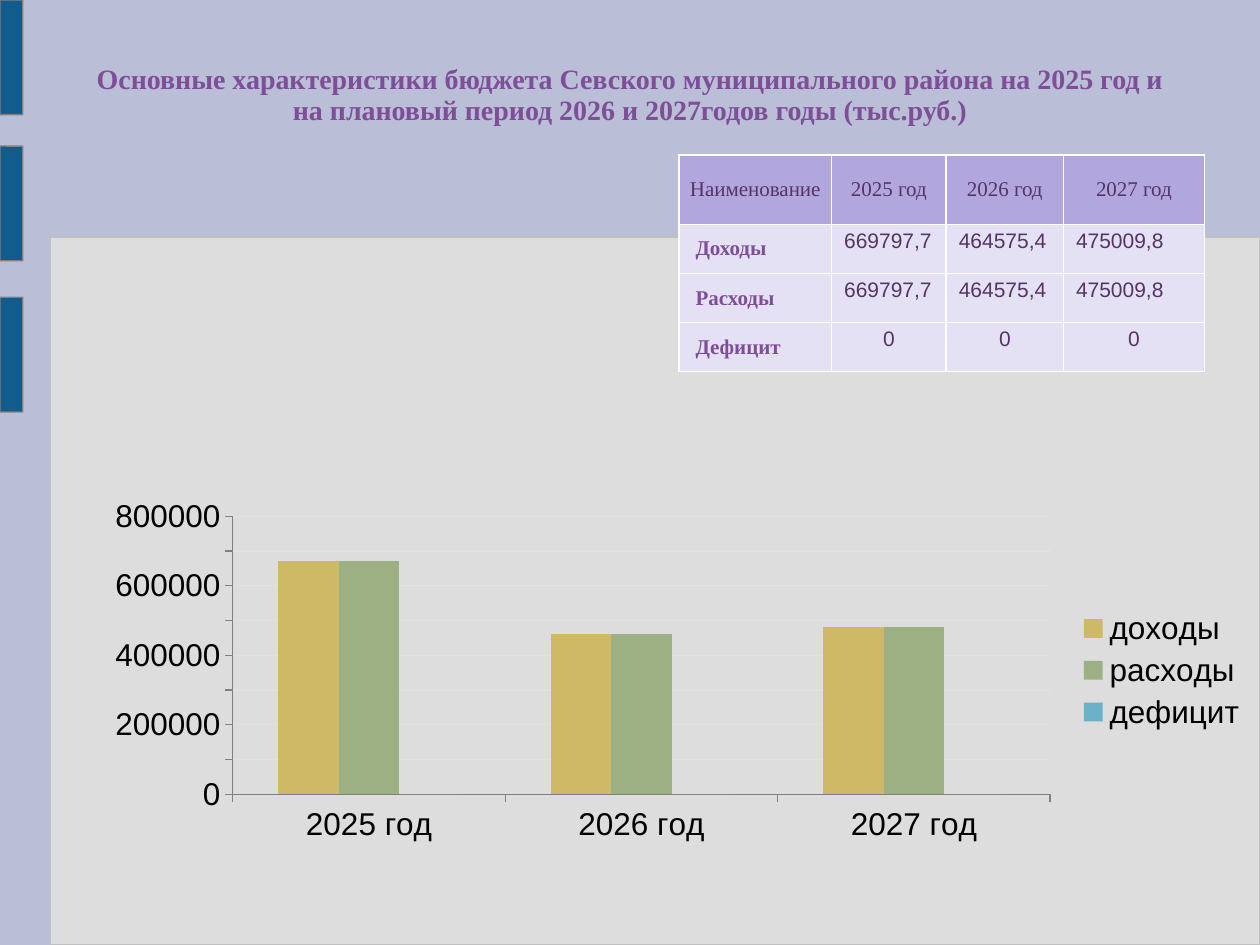
from lxml import etree
from pptx import Presentation
from pptx import util as u
from pptx.chart.data import CategoryChartData
from pptx.dml.color import RGBColor
from pptx.enum import chart as ch, shapes, text
from pptx.oxml.ns import qn

TITLE = ("Основные характеристики бюджета Севского муниципального района на 2025 год и "
         "на плановый период 2026 и 2027годов годы (тыс.руб.)")
HEADER = ["Наименование", "2025 год", "2026 год", "2027 год"]
BUDGET = [
    ("Доходы", ["669797,7", "464575,4", "475009,8"]),
    ("Расходы", ["669797,7", "464575,4", "475009,8"]),
    ("Дефицит", ["0", "0", "0"]),
]
BARS = [
    ("доходы", [670000, 460000, 480000], "CEB966"),
    ("расходы", [670000, 460000, 480000], "9CB084"),
    ("дефицит", [0, 0, 0], "6BB1C9"),
]
COLUMN_WIDTHS = [1.21, 0.91, 0.93, 1.12]
ROW_HEIGHTS = [0.55, 0.39, 0.39, 0.39]
TAB_TOPS = [0, 1.16, 2.36]

THEME = {
    "background": "BABED6", "panel": "DDDDDD", "panel_line": "C0C0C0",
    "tab": "125C8D", "tab_line": "808080",
    "accent": "7E4E99", "ink": "543466", "header": "B2A6DF", "body": "E5E1F4",
    "border": "FFFFFF", "grid": "E1E0E2", "axis": "808080", "chart_text": "000000",
    "serif": "Times New Roman", "sans": "Arial",
    "title_size": 16, "table_size": 12, "chart_size": 18, "leading": 0.93,
}


def color(key):
    return RGBColor.from_string(THEME.get(key, key))


def style_font(font, size, face, ink, bold=False):
    font.size, font.name, font.bold = u.Pt(THEME[size]), THEME[face], bold
    font.color.rgb = color(ink)


def style_text(frame, align, *font_style):
    paragraph = frame.paragraphs[0]
    paragraph.alignment = align
    paragraph.line_spacing = THEME["leading"]
    for run in paragraph.runs:
        style_font(run.font, *font_style)


def set_margins(holder, left, top, right, bottom):
    holder.margin_left, holder.margin_top = u.Inches(left), u.Inches(top)
    holder.margin_right, holder.margin_bottom = u.Inches(right), u.Inches(bottom)


def add_block(slide, box, fill, line, corner):
    block = slide.shapes.add_shape(shapes.MSO_SHAPE.ROUNDED_RECTANGLE, *map(u.Inches, box))
    block.adjustments[0] = corner
    block.shadow.inherit = False
    block.fill.solid()
    block.fill.fore_color.rgb = color(fill)
    block.line.color.rgb = color(line)
    block.line.width = u.Pt(0.75)


def add_borders(cell):
    properties = cell._tc.get_or_add_tcPr()
    for side in "LRTB":
        edge = etree.SubElement(properties, qn(f"a:ln{side}"), w=str(u.Pt(1)))
        fill = etree.SubElement(edge, qn("a:solidFill"))
        etree.SubElement(fill, qn("a:srgbClr"), val=THEME["border"])


def add_title(slide):
    title = slide.shapes.title
    title.left, title.top, title.width, title.height = map(u.Inches, (0.73, 0.29, 8.54, 0.94))
    frame = title.text_frame
    frame.text = TITLE
    frame.word_wrap = True
    frame.auto_size = text.MSO_AUTO_SIZE.NONE
    frame.vertical_anchor = text.MSO_ANCHOR.MIDDLE
    set_margins(frame, 0, 0, 0, 0)
    style_text(frame, text.PP_ALIGN.CENTER, "title_size", "serif", "accent", True)


def add_budget_table(slide):
    rows = [HEADER] + [[label, *amounts] for label, amounts in BUDGET]
    box = (5.39, 1.23, sum(COLUMN_WIDTHS), sum(ROW_HEIGHTS))
    table = slide.shapes.add_table(len(rows), len(HEADER), *map(u.Inches, box)).table
    for column, width in zip(table.columns, COLUMN_WIDTHS):
        column.width = u.Inches(width)
    for row, height in zip(table.rows, ROW_HEIGHTS):
        row.height = u.Inches(height)
    for r, row in enumerate(rows):
        for c, entry in enumerate(row):
            cell = table.cell(r, c)
            cell.text = entry
            is_header, is_label = r == 0, r > 0 and c == 0
            if is_header or is_label:
                cell.vertical_anchor = text.MSO_ANCHOR.MIDDLE
                set_margins(cell, 0.13 if is_label else 0.01, 0.01, 0.01, 0)
            centred = is_header or entry == "0"
            style_text(cell.text_frame,
                       text.PP_ALIGN.CENTER if centred else text.PP_ALIGN.LEFT,
                       "table_size", "serif" if is_header or is_label else "sans",
                       "accent" if is_label else "ink", is_label)
            add_borders(cell)
            cell.fill.solid()
            cell.fill.fore_color.rgb = color("header" if is_header else "body")


def add_budget_chart(slide):
    data = CategoryChartData()
    data.categories = HEADER[1:]
    for label, values, _ in BARS:
        data.add_series(label, values)
    box = map(u.Inches, (0.73, 3.9, 9.27, 2.84))
    chart = slide.shapes.add_chart(ch.XL_CHART_TYPE.COLUMN_CLUSTERED, *box, data).chart
    style_font(chart.font, "chart_size", "sans", "chart_text")
    chart.has_title = False
    chart.has_legend = True
    chart.legend.position = ch.XL_LEGEND_POSITION.RIGHT
    chart.legend.include_in_layout = False
    plot = chart.plots[0]
    plot.gap_width, plot.overlap, plot.vary_by_categories = 150, 0, False
    for series, (_, _, fill) in zip(plot.series, BARS):
        series.format.fill.solid()
        series.format.fill.fore_color.rgb = color(fill)
    for axis in (chart.category_axis, chart.value_axis):
        axis.major_tick_mark = ch.XL_TICK_MARK.OUTSIDE
        axis.format.line.color.rgb = color("axis")
        axis.format.line.width = u.Pt(0.75)
    scale = chart.value_axis
    scale.minimum_scale, scale.maximum_scale, scale.major_unit = 0, 800000, 100000
    scale.tick_labels.number_format = "General"
    scale.tick_labels.number_format_is_linked = False
    scale.major_gridlines.format.line.color.rgb = color("grid")
    scale.major_gridlines.format.line.width = u.Pt(0.75)


def main():
    deck = Presentation()
    deck.slide_width, deck.slide_height = u.Inches(10), u.Inches(7.5)
    slide = deck.slides.add_slide(deck.slide_layouts[5])
    slide.background.fill.solid()
    slide.background.fill.fore_color.rgb = color("background")
    add_block(slide, (0.4, 1.88, 9.6, 5.62), "panel", "panel_line", 0)
    for top in TAB_TOPS:
        add_block(slide, (0, top, 0.18, 0.91), "tab", "tab_line", 0.01)
    add_title(slide)
    add_budget_table(slide)
    add_budget_chart(slide)
    deck.save("out.pptx")


if __name__ == "__main__":
    main()
